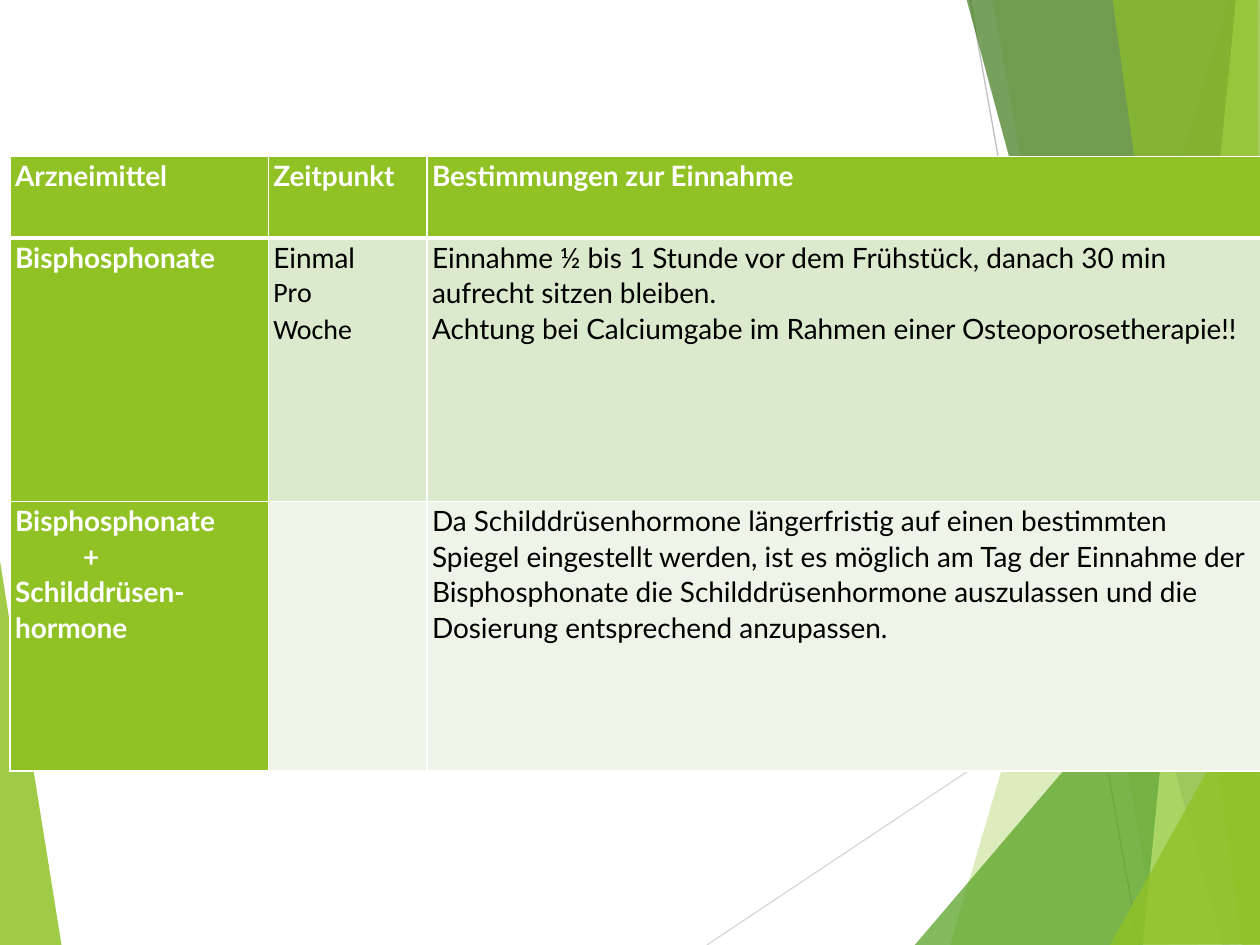
from lxml import etree
from pptx import Presentation
from pptx.dml.color import RGBColor
from pptx.enum.shapes import MSO_CONNECTOR
from pptx.oxml.ns import qn
from pptx.util import Inches, Pt

STRAIGHT = MSO_CONNECTOR.STRAIGHT
BLANK_LAYOUT = 6
GREEN, WHITE, BLACK = "90C226", "FFFFFF", "000000"
BAND_DARK, BAND_LIGHT = "DBE9CD", "EEF4E8"

FACETS_LEFT = [
    ([(-0.01, 4.39), (0.49, 7.51), (-0.01, 7.5)], GREEN, 85),
]
LINES = [
    ((5.61, 7.5), (10.01, 4.57), "D9D9D9"),
    ((7.7, 0), (9.04, 7.5), "BFBFBF"),
]
FACETS_RIGHT = [
    ([(9.75, 0), (7.54, 7.5), (10.02, 7.51), (10.01, 0.01)], GREEN, 30),
    ([(7.88, -0.01), (9.19, 7.5), (10.01, 7.5), (10.01, -0.01)], GREEN, 20),
    ([(7.26, 7.5), (10, 4.29), (10.01, 7.5)], "54A021", 72),
    ([(7.67, -0.01), (9.7, 7.5), (10.01, 7.49), (10.01, -0.01)], "3F7819", 70),
    ([(9.81, -0.01), (9.07, 7.5), (10.01, 7.5), (10, -0.01)], "C0E474", 70),
    ([(8.83, -0.01), (9.86, 7.5), (10, 7.5), (9.98, -0.01)], GREEN, 65),
    ([(8.81, 7.5), (10.01, 5.35), (10.01, 7.49)], GREEN, 80),
]

COLUMN_WIDTHS = [2.05, 1.26, 6.62]
ROW_HEIGHTS = [0.65, 2.09, 2.14]
ROWS = [
    [["Arzneimittel"], ["Zeitpunkt"], ["Bestimmungen zur Einnahme"]],
    [
        ["Bisphosphonate"],
        ["Einmal", ("Pro", {"font": "Calibri"}), ("Woche", {"font": "Calibri"})],
        [
            "Einnahme ½ bis 1 Stunde vor dem Frühstück, danach 30 min aufrecht sitzen bleiben.",
            "Achtung bei Calciumgabe im Rahmen einer Osteoporosetherapie!!",
        ],
    ],
    [
        ["Bisphosphonate", ("+", {"indent": 0.54}), "Schilddrüsen-", "hormone"],
        [],
        [
            "Da Schilddrüsenhormone längerfristig auf einen bestimmten Spiegel "
            "eingestellt werden, ist es möglich am Tag der Einnahme der "
            "Bisphosphonate die Schilddrüsenhormone auszulassen und die "
            "Dosierung entsprechend anzupassen."
        ],
    ],
]


def rgb(value):
    return RGBColor.from_string(value)


def write_text(paragraph, text, font="Lato", size=16, color=BLACK, bold=False, indent=0):
    if indent:
        paragraph._p.get_or_add_pPr().set("marL", str(Inches(indent)))
    paragraph.line_spacing = 1.07
    run = paragraph.add_run()
    run.text = text
    run.font.name = font
    run.font.size = Pt(size)
    run.font.bold = bold
    run.font.color.rgb = rgb(color)


class SlideBuilder:
    def __init__(self, slide):
        self.slide = slide
        self.border_color = WHITE
        self.cell_margin = Inches(0.04)

    def facet(self, points, color, opacity):
        corners = [(Inches(x), Inches(y)) for x, y in points]
        builder = self.slide.shapes.build_freeform(*corners[0])
        builder.add_line_segments(corners[1:], close=True)
        shape = builder.convert_to_shape()
        shape.shadow.inherit = False
        shape.line.fill.background()
        shape.fill.solid()
        shape.fill.fore_color.rgb = rgb(color)
        color_element = shape._element.spPr.find(".//" + qn("a:srgbClr"))
        etree.SubElement(color_element, qn("a:alpha"), val=str(opacity * 1000))

    def line(self, start, end, color):
        connector = self.slide.shapes.add_connector(
            STRAIGHT, *(Inches(value) for value in start + end)
        )
        connector.line.color.rgb = rgb(color)
        connector.line.width = Pt(0.75)
        etree.SubElement(connector._element.spPr, qn("a:effectLst"))

    def borders(self, cell, top, bottom):
        properties = cell._tc.get_or_add_tcPr()
        for tag, width in (("lnL", 1), ("lnR", 1), ("lnT", top), ("lnB", bottom)):
            border = etree.SubElement(properties, qn("a:" + tag), w=str(Pt(width)))
            fill = etree.SubElement(border, qn("a:solidFill"))
            etree.SubElement(fill, qn("a:srgbClr"), val=self.border_color)

    def cell(self, cell, lines, fill, top, bottom, **style):
        self.borders(cell, top, bottom)
        cell.fill.solid()
        cell.fill.fore_color.rgb = rgb(fill)
        cell.margin_left = cell.margin_right = self.cell_margin
        cell.margin_top = cell.margin_bottom = 0
        for index, line in enumerate(lines):
            frame = cell.text_frame
            paragraph = frame.add_paragraph() if index else frame.paragraphs[0]
            text, changes = (line, {}) if isinstance(line, str) else line
            write_text(paragraph, text, **{**style, **changes})

    def table(self, left, top, widths, heights, rows):
        table = self.slide.shapes.add_table(
            len(rows), len(widths), Inches(left), Inches(top),
            Inches(sum(widths)), Inches(sum(heights)),
        ).table
        for column, width in zip(table.columns, widths):
            column.width = Inches(width)
        for row, height in zip(table.rows, heights):
            row.height = Inches(height)
        for r, row in enumerate(rows):
            for c, lines in enumerate(row):
                heading = r == 0 or c == 0
                band = BAND_DARK if r % 2 else BAND_LIGHT
                self.cell(
                    table.cell(r, c), lines, GREEN if heading else band,
                    top=3 if r == 1 else 1, bottom=3 if r == 0 else 1,
                    color=WHITE if heading else BLACK, bold=heading,
                )


def main():
    presentation = Presentation()
    presentation.slide_width = Inches(10)
    presentation.slide_height = Inches(7.5)
    layout = presentation.slide_layouts[BLANK_LAYOUT]
    builder = SlideBuilder(presentation.slides.add_slide(layout))
    for facet in FACETS_LEFT:
        builder.facet(*facet)
    for line in LINES:
        builder.line(*line)
    for facet in FACETS_RIGHT:
        builder.facet(*facet)
    builder.table(0.08, 1.24, COLUMN_WIDTHS, ROW_HEIGHTS, ROWS)
    presentation.save("out.pptx")


if __name__ == "__main__":
    main()
